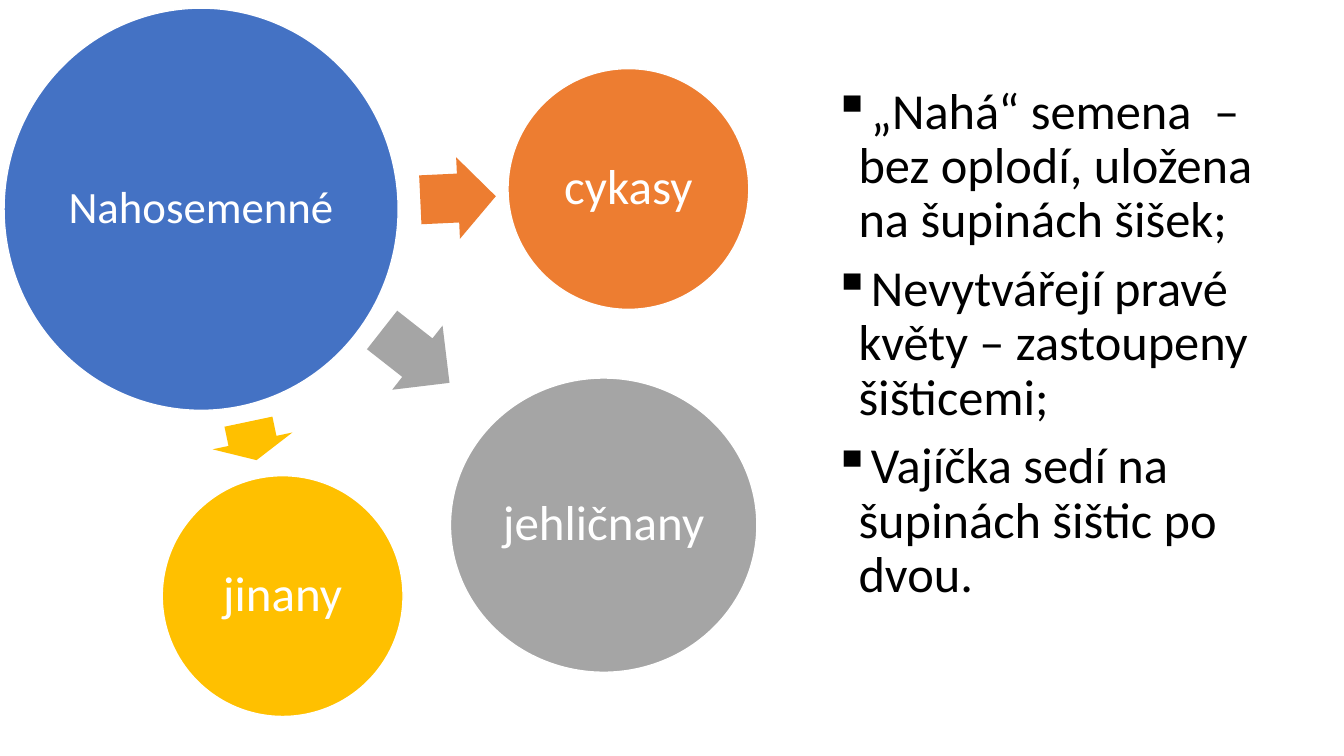
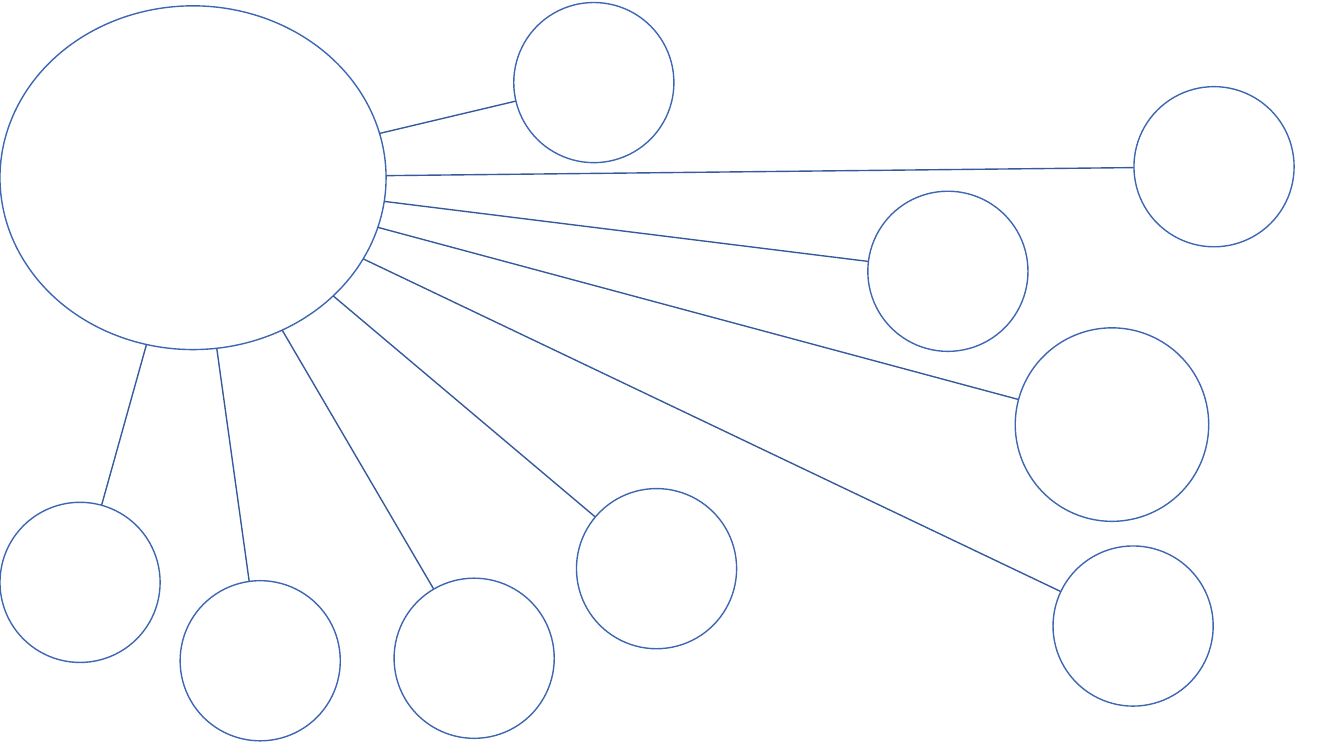
from dataclasses import dataclass
from math import hypot

from lxml.etree import SubElement
from pptx import Presentation
from pptx.dml.color import RGBColor
from pptx.enum.shapes import MSO_CONNECTOR, MSO_SHAPE
from pptx.enum.text import MSO_ANCHOR, PP_ALIGN
from pptx.oxml.ns import qn
from pptx.util import Pt


@dataclass(frozen=True)
class Theme:
    font: str = "Calibri"
    white: str = "FFFFFF"
    black: str = "000000"
    blue: str = "4472C4"
    orange: str = "ED7D31"
    gray: str = "A5A5A5"
    gold: str = "FFC000"
    ring: str = "3E67B2"
    spoke: str = "365B9D"
    line: float = 1
    root: float = 32
    leaf: float = 35
    body: float = 36


class Deck:
    def __init__(self, theme):
        self.theme = theme
        self.show = Presentation()
        self.show.slide_width, self.show.slide_height = Pt(960), Pt(540)
        self.slide = None

    def page(self):
        self.slide = self.show.slides.add_slide(self.show.slide_layouts[6])

    def shape(self, kind, box, fill, line=None):
        shape = self.slide.shapes.add_shape(kind, *map(Pt, box))
        shape.shadow.inherit = False
        shape.fill.solid()
        shape.fill.fore_color.rgb = RGBColor.from_string(fill)
        if line:
            shape.line.color.rgb = RGBColor.from_string(line)
            shape.line.width = Pt(self.theme.line)
        else:
            shape.line.fill.background()
        return shape

    def style(self, para, size, color):
        para.line_spacing = 0.9
        para.font.name = self.theme.font
        para.font.size = Pt(size)
        para.font.color.rgb = RGBColor.from_string(color)

    def disc(self, box, fill, line, text="", size=0):
        disc = self.shape(MSO_SHAPE.OVAL, box, fill, line)
        if text:
            frame = disc.text_frame
            frame.word_wrap = True
            frame.vertical_anchor = MSO_ANCHOR.MIDDLE
            frame.margin_left = frame.margin_right = Pt(3)
            frame.margin_top = frame.margin_bottom = Pt(3)
            para = frame.paragraphs[0]
            para.text = text
            para.alignment = PP_ALIGN.CENTER
            self.style(para, size, self.theme.white)

    def arrow(self, box, turn, fill):
        arrow = self.shape(MSO_SHAPE.RIGHT_ARROW, box, fill)
        arrow.adjustments[0] = 0.6
        arrow.adjustments[1] = 0.5
        arrow.rotation = turn

    def spoke(self, hub, node):
        start, end = rim(hub, node), rim(node, hub)
        spoke = self.slide.shapes.add_connector(
            MSO_CONNECTOR.STRAIGHT, *map(Pt, start + end))
        spoke.line.color.rgb = RGBColor.from_string(self.theme.spoke)
        spoke.line.width = Pt(self.theme.line)
        SubElement(spoke._element.spPr, qn("a:effectLst"))

    def list(self, box, items):
        frame = self.slide.shapes.add_textbox(*map(Pt, box)).text_frame
        frame.word_wrap = True
        for index, item in enumerate(items):
            para = frame.add_paragraph() if index else frame.paragraphs[0]
            para.text = item
            para.space_before = Pt(10)
            props = para._p.get_or_add_pPr()
            props.set("marL", str(Pt(18)))
            props.set("indent", str(Pt(-18)))
            SubElement(props, qn("a:buChar")).set("char", "▪")
            self.style(para, self.theme.body, self.theme.black)


def rim(box, goal):
    left, top, width, height = box
    x, y = left + width / 2, top + height / 2
    dx = goal[0] + goal[2] / 2 - x
    dy = goal[1] + goal[3] / 2 - y
    scale = hypot(2 * dx / width, 2 * dy / height)
    return x + dx / scale, y + dy / scale


def groups(deck):
    theme = deck.theme
    deck.page()
    deck.disc((2.9, 5.8, 281.5, 287.3), theme.blue, theme.white,
              "Nahosemenné", theme.root)
    leaves = [
        ("cykasy", theme.orange, (362.9, 49, 172, 172),
         (300.2, 112.3, 54, 58.3), -2.7),
        ("jehličnany", theme.gray, (321.8, 270, 218.9, 210.2),
         (266.4, 225.4, 61.2, 58.3), 38.1),
        ("jinany", theme.gold, (115.9, 339.8, 172, 172),
         (166.3, 285.8, 28.1, 58.3), 78.1),
    ]
    for text, fill, box, arrow, turn in leaves:
        deck.arrow(arrow, turn, fill)
        deck.disc(box, fill, theme.white, text, theme.leaf)
    deck.list((588.2, 57.6, 345.6, 424.8), [
        "„Nahá“ semena  – bez oplodí, uložena na šupinách šišek;",
        "Nevytvářejí pravé květy – zastoupeny šišticemi;",
        "Vajíčka sedí na šupinách šištic po dvou.",
    ])


def web(deck):
    theme = deck.theme
    deck.page()
    hub = (0, 4.2, 275.8, 245.5)
    small, large = 114.4, 138.2
    nodes = [
        (810, 61.9, small),
        (619.9, 136.6, small),
        (725.2, 234.2, large),
        (752.2, 390, small),
        (281.5, 413, small),
        (128.7, 414.8, small),
        (0, 358.8, small),
        (411.8, 349, small),
        (367, 1.8, small),
    ]
    deck.disc(hub, theme.white, theme.ring)
    for left, top, size in nodes:
        node = (left, top, size, size)
        deck.spoke(hub, node)
        deck.disc(node, theme.white, theme.ring)


def main():
    deck = Deck(Theme())
    groups(deck)
    web(deck)
    deck.show.save("out.pptx")


if __name__ == "__main__":
    main()
